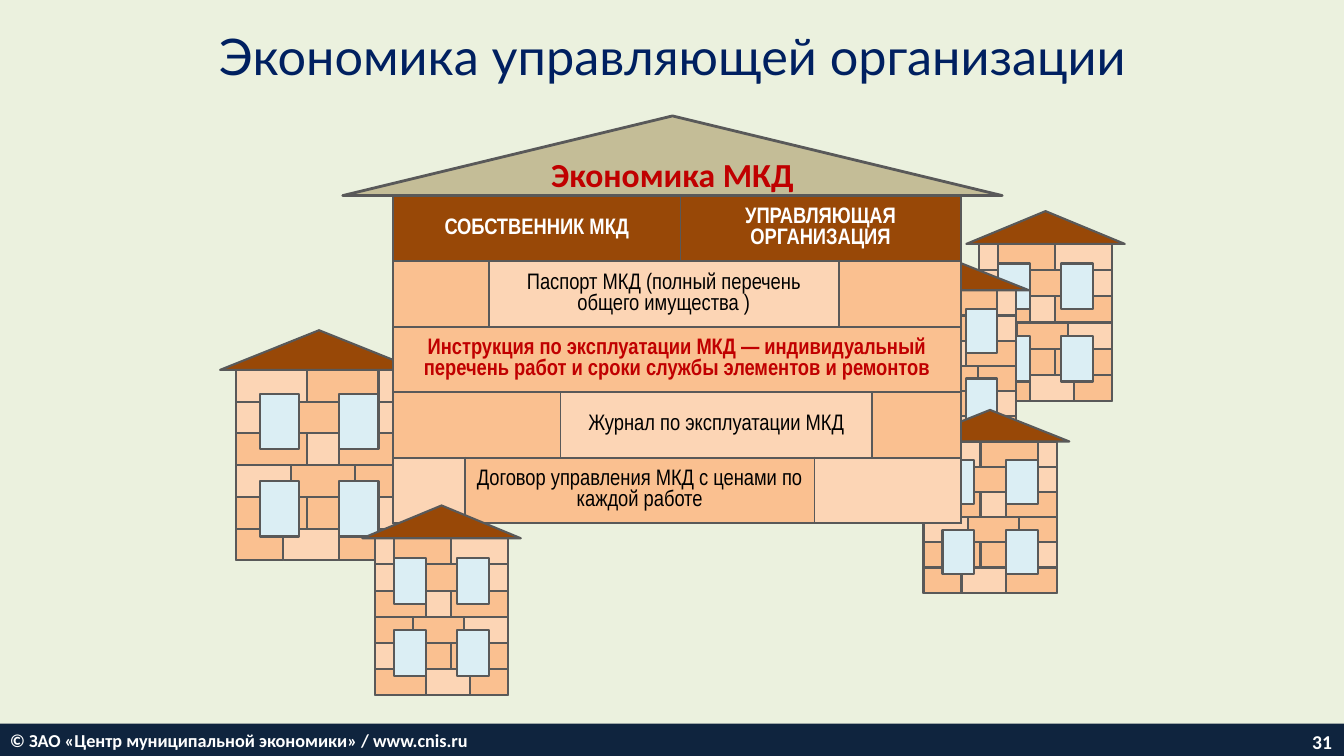
from typing import NamedTuple

from lxml import etree
from pptx import Presentation
from pptx.dml.color import RGBColor
from pptx.enum.shapes import MSO_SHAPE
from pptx.enum.text import MSO_ANCHOR, PP_ALIGN
from pptx.oxml.ns import qn
from pptx.util import Inches, Pt

RECTANGLE = MSO_SHAPE.RECTANGLE
TRIANGLE = MSO_SHAPE.ISOSCELES_TRIANGLE
MIDDLE = MSO_ANCHOR.MIDDLE
LEFT, CENTER, RIGHT = PP_ALIGN.LEFT, PP_ALIGN.CENTER, PP_ALIGN.RIGHT

LIGHT_BRICK = "FCD5B5"
DARK_BRICK = "FAC090"
BROWN = "984807"
GLASS = "DBEEF4"
OUTLINE = "595959"
RED = "C00000"
WHITE = "FFFFFF"
BLACK = "000000"


class House(NamedTuple):
    left: float
    top: float
    width: float
    height: float
    mirrored: bool = False


class Part(NamedTuple):
    """Part of a house: x and width in wall units, y and height in brick rows."""
    x: float
    y: float
    width: float
    height: float
    color: str
    kind: MSO_SHAPE = RECTANGLE


class TableCell(NamedTuple):
    row: int
    column: int
    span: int
    fill: str
    text: str = ""
    color: str = BLACK
    bold: bool = False


WALL_UNITS = 21
BRICK_ROWS = 6
# x, row, width and colour of each brick
BRICKS = [
    (0, 0, 9, LIGHT_BRICK), (9, 0, 9, DARK_BRICK),
    (13, 1, 8, LIGHT_BRICK), (4, 1, 9, DARK_BRICK),
    (0, 2, 9, DARK_BRICK), (13, 2, 8, DARK_BRICK),
    (7, 3, 8, DARK_BRICK), (15, 3, 6, DARK_BRICK),
    (0, 4, 9, DARK_BRICK), (9, 4, 8, DARK_BRICK),
    (0, 5, 6, DARK_BRICK), (13, 5, 8, DARK_BRICK),
]
HOUSE_PARTS = [
    Part(0, 0, WALL_UNITS, BRICK_ROWS, LIGHT_BRICK),
    *(Part(x, row, width, 1, color) for x, row, width, color in BRICKS),
    Part(-2, -1.25, 25, 1.25, BROWN, TRIANGLE),
    *(Part(x, y, 5, 1.75, GLASS) for y in (0.75, 3.5) for x in (3, 13)),
]

HOUSES_BEHIND = [
    House(9.71, 2.42, 1.32, 1.56, mirrored=True),
    House(8.76, 2.88, 1.32, 1.5),
    House(9.16, 4.38, 1.32, 1.5),
    House(2.34, 3.67, 1.65, 1.89),
]
HOUSE_IN_FRONT = House(3.72, 5.34, 1.32, 1.56, mirrored=True)

COLUMN_WIDTHS = [0.71, 0.16, 0.71, 1.19, 1.33, 0.24, 0.33, 0.88]
ROW_COUNT = 5
ROW_HEIGHT = 0.65
TABLE_CELLS = [
    TableCell(0, 0, 4, BROWN, "СОБСТВЕННИК МКД", WHITE, True),
    TableCell(0, 4, 4, BROWN, "УПРАВЛЯЮЩАЯ ОРГАНИЗАЦИЯ", WHITE, True),
    TableCell(1, 0, 2, DARK_BRICK),
    TableCell(1, 2, 4, LIGHT_BRICK, "Паспорт МКД (полный перечень общего имущества )"),
    TableCell(1, 6, 2, DARK_BRICK),
    TableCell(2, 0, 8, DARK_BRICK, "Инструкция по эксплуатации МКД — индивидуальный "
              "перечень работ и сроки службы элементов и ремонтов", RED, True),
    TableCell(3, 0, 3, DARK_BRICK),
    TableCell(3, 3, 4, LIGHT_BRICK, "Журнал по эксплуатации МКД"),
    TableCell(3, 7, 1, DARK_BRICK),
    TableCell(4, 0, 1, LIGHT_BRICK),
    TableCell(4, 1, 4, DARK_BRICK, "Договор управления МКД с ценами по каждой работе"),
    TableCell(4, 5, 3, LIGHT_BRICK),
]


def rgb(color: str) -> RGBColor:
    return RGBColor.from_string(color)


def add_filled_shape(shapes, kind: MSO_SHAPE, left: float, top: float, width: float,
                     height: float, color: str, line_width: float = 0):
    shape = shapes.add_shape(kind, Inches(left), Inches(top), Inches(width), Inches(height))
    shape.shadow.inherit = False
    shape.fill.solid()
    shape.fill.fore_color.rgb = rgb(color)
    if line_width:
        shape.line.color.rgb = rgb(OUTLINE)
        shape.line.width = Pt(line_width)
    else:
        shape.line.fill.background()
    return shape


def write_text(frame, text: str, font: str, size: float, color: str,
               bold: bool = False, align: PP_ALIGN = CENTER) -> None:
    frame.text = text
    frame.word_wrap = True
    paragraph = frame.paragraphs[0]
    paragraph.alignment = align
    for span in paragraph.runs:
        span.font.name = font
        span.font.size = Pt(size)
        span.font.bold = bold
        span.font.color.rgb = rgb(color)


def add_text_box(page, left: float, top: float, width: float, height: float):
    box = page.shapes.add_textbox(Inches(left), Inches(top), Inches(width), Inches(height))
    box.text_frame.vertical_anchor = MIDDLE
    return box


def draw_house(page, house: House) -> None:
    group = page.shapes.add_group_shape()
    unit = house.width / WALL_UNITS
    row = house.height / BRICK_ROWS
    for part in HOUSE_PARTS:
        x = WALL_UNITS - part.x - part.width if house.mirrored else part.x
        add_filled_shape(group.shapes, part.kind, house.left + x * unit,
                         house.top + part.y * row, part.width * unit,
                         part.height * row, part.color, 1.5)


def add_borders(cell) -> None:
    """Outline all four sides; call before the cell's fill is set."""
    properties = cell._tc.get_or_add_tcPr()
    for side in ("a:lnL", "a:lnR", "a:lnT", "a:lnB"):
        line = etree.SubElement(properties, qn(side), w=str(Pt(1.5)))
        fill = etree.SubElement(line, qn("a:solidFill"))
        etree.SubElement(fill, qn("a:srgbClr"), val=OUTLINE)


def draw_table(page) -> None:
    table = page.shapes.add_table(
        ROW_COUNT, len(COLUMN_WIDTHS), Inches(3.9), Inches(1.94),
        Inches(sum(COLUMN_WIDTHS)), Inches(ROW_COUNT * ROW_HEIGHT)).table
    table.first_row = False
    table.horz_banding = False
    for column, width in zip(table.columns, COLUMN_WIDTHS):
        column.width = Inches(width)
    for row in table.rows:
        row.height = Inches(ROW_HEIGHT)
    for cell in table.iter_cells():
        add_borders(cell)
    for entry in TABLE_CELLS:
        cell = table.cell(entry.row, entry.column)
        if entry.span > 1:
            cell.merge(table.cell(entry.row, entry.column + entry.span - 1))
        cell.fill.solid()
        cell.fill.fore_color.rgb = rgb(entry.fill)
        cell.vertical_anchor = MIDDLE
        if entry.text:
            write_text(cell.text_frame, entry.text, "Arial Narrow", 16,
                       entry.color, entry.bold)


def draw_main_roof(page) -> None:
    roof = add_filled_shape(page.shapes, TRIANGLE, 3.4, 1.15, 6.54, 0.79, "C4BD97", 2)
    roof.text_frame.margin_top = 0
    roof.text_frame.margin_bottom = Inches(0.04)
    write_text(roof.text_frame, "Экономика МКД", "Calibri", 24, RED, True)


def draw_footer(page) -> None:
    bar = add_filled_shape(page.shapes, RECTANGLE, 0, 7.18, 13.33, 0.32, "0F243E")
    write_text(bar.text_frame, "© ЗАО «Центр муниципальной экономики» / www.cnis.ru",
               "Calibri", 13, WHITE, True, LEFT)
    number = add_text_box(page, 10.98, 7.21, 2.33, 0.3)
    write_text(number.text_frame, "31", "Calibri", 14, WHITE, True, RIGHT)


def main() -> None:
    deck = Presentation()
    deck.slide_width = Inches(13.33)
    deck.slide_height = Inches(7.5)
    page = deck.slides.add_slide(deck.slide_layouts[6])
    page.background.fill.solid()
    page.background.fill.fore_color.rgb = rgb("EBF1DE")
    for house in HOUSES_BEHIND:
        draw_house(page, house)
    title = add_text_box(page, 1.67, 0.19, 10, 0.71)
    write_text(title.text_frame, "Экономика управляющей организации", "Lato", 36, "002060")
    draw_table(page)
    draw_main_roof(page)
    draw_house(page, HOUSE_IN_FRONT)
    draw_footer(page)
    deck.save("out.pptx")


if __name__ == "__main__":
    main()
